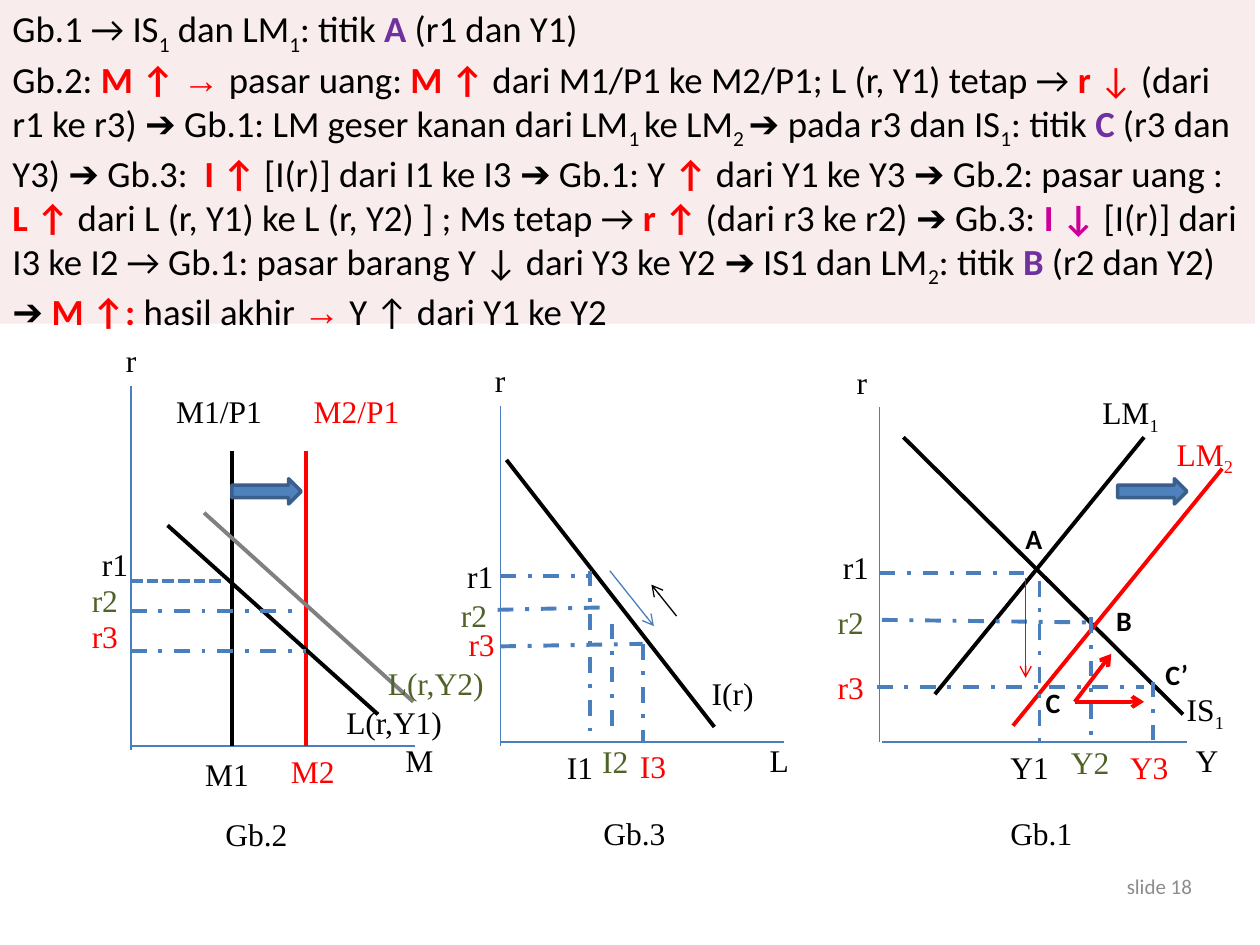
import pptx
import pptx.util
import pptx.dml.color
import pptx.enum.dml
import pptx.enum.shapes
import pptx.enum.text
import pptx.oxml
import pptx.oxml.ns

Inches = pptx.util.Inches
Dash = pptx.enum.dml.MSO_LINE
BLACK, RED, GREEN, BLUE, GREY = "000000", "FF0000", "4F6228", "4B7EBC", "808080"
SERIF, SANS = "Times New Roman", "Calibri"

RUN_STYLES = {
    "plain": {},
    "sub": {"subscript": True},
    "red": {"color": RED, "bold": True},
    "red light": {"color": RED},
    "red serif": {"color": RED, "bold": True, "font": SERIF},
    "purple": {"color": "7030A0", "bold": True},
    "magenta": {"color": "CC0099", "bold": True},
}

EXPLANATION = [
    [("Gb.1 → IS", "plain"), ("1", "sub"), (" dan LM", "plain"), ("1", "sub"),
     (": titik ", "plain"), ("A", "purple"), (" (r1 dan Y1)", "plain")],
    [("Gb.2: ", "plain"), ("M ↑ ", "red"), ("→ ", "red serif"), ("pasar uang: ", "plain"),
     ("M ↑", "red"), (" dari M1/P1 ke M2/P1; L (r, Y1) tetap → ", "plain"),
     ("r ", "red"), ("↓", "red light"),
     (" (dari r1 ke r3) ➔ Gb.1: LM geser kanan dari LM", "plain"), ("1 ", "sub"),
     ("ke LM", "plain"), ("2 ", "sub"), ("➔ pada r3 dan IS", "plain"), ("1", "sub"),
     (": titik ", "plain"), ("C", "purple"), (" (r3 dan Y3) ➔ Gb.3:  ", "plain"),
     ("I ↑", "red"), (" [I(r)] dari I1 ke I3 ➔ Gb.1: Y ", "plain"), ("↑ ", "red"),
     ("dari Y1 ke Y3 ➔ Gb.2: pasar uang : ", "plain"), ("L ↑", "red"),
     (" dari L (r, Y1) ke L (r, Y2) ] ; Ms tetap → ", "plain"), ("r ↑", "red"),
     (" (dari r3 ke r2) ➔ Gb.3: ", "plain"), ("I ↓", "magenta"),
     (" [I(r)] dari I3 ke I2 → Gb.1: pasar barang Y ↓ dari Y3 ke Y2 ➔ IS1 dan LM", "plain"),
     ("2", "sub"), (": titik ", "plain"), ("B", "purple"), (" (r2 dan Y2) ➔ ", "plain"),
     ("M ↑: ", "red"), ("hasil akhir ", "plain"), ("→ ", "red serif"),
     ("Y ↑ dari Y1 ke Y2", "plain")],
]


def rgb(value):
    """Turn a hex string into a colour."""
    return pptx.dml.color.RGBColor.from_string(value)


def add_run(paragraph, text, size, font=SANS, color=BLACK, bold=False, subscript=False):
    """Add one formatted run to a paragraph."""
    run = paragraph.add_run()
    run.text = text
    run.font.size = pptx.util.Pt(size)
    run.font.name = font
    run.font.bold = bold
    run.font.color.rgb = rgb(color)
    if subscript:
        run.font._element.set("baseline", "-25000")


def add_label(slide, left, top, width, text, color=BLACK, subscript="",
              size=18, font=SERIF, bold=False):
    """Add a one-line label with an optional subscript."""
    box = slide.shapes.add_textbox(Inches(left), Inches(top), Inches(width), Inches(0.4))
    frame = box.text_frame
    frame.word_wrap = False
    frame.auto_size = pptx.enum.text.MSO_AUTO_SIZE.SHAPE_TO_FIT_TEXT
    add_run(frame.paragraphs[0], text, size, font, color, bold)
    if subscript:
        add_run(frame.paragraphs[0], subscript, size, font, color, bold, True)


def add_line(slide, left, top, ends, color, width=2.25, dash=None, arrow=False):
    """Draw a line whose ends are measured from the panel corner."""
    x1, y1, x2, y2 = ends
    connector = slide.shapes.add_connector(
        pptx.enum.shapes.MSO_CONNECTOR.STRAIGHT, Inches(left + x1), Inches(top + y1),
        Inches(left + x2), Inches(top + y2))
    connector.line.color.rgb = rgb(color)
    connector.line.width = pptx.util.Pt(width)
    if dash:
        connector.line.dash_style = dash
    properties = connector._element.spPr
    if arrow:
        tail = pptx.oxml.parse_xml(
            f'<a:tailEnd {pptx.oxml.ns.nsdecls("a")} type="arrow"/>')
        properties.find(pptx.oxml.ns.qn("a:ln")).append(tail)
    properties.append(pptx.oxml.parse_xml(
        f'<a:effectLst {pptx.oxml.ns.nsdecls("a")}/>'))


def add_shift_arrow(slide, left, top):
    """Add the block arrow that marks a shift to the right."""
    arrow = slide.shapes.add_shape(pptx.enum.shapes.MSO_SHAPE.RIGHT_ARROW,
                                   Inches(left), Inches(top), Inches(0.55), Inches(0.2))
    arrow.shadow.inherit = False
    arrow.fill.solid()
    arrow.fill.fore_color.rgb = rgb("4F81BD")
    arrow.line.color.rgb = rgb("3A5F8C")
    arrow.line.width = pptx.util.Pt(2)


def add_panel(slide, left, top, axes, curves, guides, labels):
    """Draw the axes, curves, dashed guides and labels of one diagram."""
    for ends in axes:
        add_line(slide, left, top, ends, BLUE, 0.75)
    for color, ends in curves:
        add_line(slide, left, top, ends, color)
    for ends in guides:
        add_line(slide, left, top, ends, BLUE, dash=Dash.DASH_DOT)
    for x, y, *details in labels:
        add_label(slide, left + x, top + y, *details)


def add_money_market(slide, left, top):
    """Draw the money market diagram, Gb.2."""
    add_panel(
        slide, left, top,
        [(0.04, 0.06, 0.04, 2.95), (0.04, 2.92, 2.29, 2.92)],
        [(BLACK, (0.84, 0.58, 0.84, 2.92)), (RED, (1.43, 0.58, 1.43, 2.92)),
         (BLACK, (0.33, 1.17, 2, 2.67)), (GREY, (0.62, 1.07, 2.28, 2.57))],
        [(0.04, 1.85, 1.39, 1.85), (0.04, 2.17, 1.43, 2.17)],
        [(-0.1, -0.34, 0.28, "r"), (2.12, 2.83, 0.43, "M"),
         (0.3, 0.06, 0.89, "M1/P1"), (1.39, 0.06, 0.89, "M2/P1", RED),
         (1.65, 2.53, 0.97, "L(r,Y1)"), (1.98, 2.22, 0.97, "L(r,Y2)", GREEN),
         (-0.29, 1.28, 0.41, "r1"), (-0.37, 1.56, 0.41, "r2", GREEN),
         (-0.37, 1.85, 0.41, "r3", RED), (0.53, 2.94, 0.55, "M1"),
         (1.21, 2.92, 0.55, "M2", RED), (0.69, 3.42, 0.7, "Gb.2")])
    add_line(slide, left, top, (0.04, 1.61, 0.75, 1.61), BLUE, dash=Dash.SQUARE_DOT)
    add_shift_arrow(slide, left + 0.84, top + 0.8)


def add_investment(slide, left, top):
    """Draw the investment diagram, Gb.3."""
    add_panel(
        slide, left, top,
        [(-0.03, 0.22, -0.03, 2.92), (-0.03, 2.89, 2.22, 2.89)],
        [(BLACK, (0.02, 0.65, 1.67, 2.77))],
        [(-0.03, 1.57, 0.68, 1.57), (-0.05, 1.84, 0.84, 1.82), (-0.03, 2.13, 1.1, 2.11),
         (0.68, 1.53, 0.68, 2.81), (0.86, 1.95, 0.86, 2.84), (1.1, 2.11, 1.1, 2.89)],
        [(-0.17, -0.18, 0.28, "r"), (2.01, 2.83, 0.36, "L"), (1.55, 2.3, 0.54, "I(r)"),
         (-0.39, 1.37, 0.41, "r1"), (-0.44, 1.68, 0.41, "r2", GREEN),
         (-0.38, 1.91, 0.41, "r3", RED), (0.4, 2.89, 0.41, "I1"),
         (0.68, 2.84, 0.41, "I2", GREEN), (0.98, 2.88, 0.41, "I3", RED),
         (0.69, 3.41, 0.7, "Gb.3")])
    add_line(slide, left, top, (0.84, 1.53, 1.19, 1.97), BLUE, 0.75, arrow=True)
    add_line(slide, left, top, (1.37, 1.89, 1.17, 1.64), BLACK, 0.75, arrow=True)


def add_is_lm(slide, left, top):
    """Draw the IS-LM diagram, Gb.1."""
    add_panel(
        slide, left, top,
        [(-0.02, 0.23, -0.02, 2.89), (0, 2.89, 2.42, 2.89)],
        [(BLACK, (0.17, 0.47, 2.39, 2.67)), (BLACK, (0.42, 2.51, 2.08, 0.47)),
         (RED, (1.04, 2.76, 2.7, 0.72))],
        [(-0.02, 1.55, 1.21, 1.55), (0, 1.92, 1.64, 1.94), (-0.04, 2.45, 2.08, 2.45),
         (1.25, 1.61, 1.25, 2.89), (1.66, 1.9, 1.66, 2.92), (2.15, 2.41, 2.15, 2.91)],
        [(-0.3, -0.17, 0.29, "r"), (2.39, 2.83, 0.38, "Y"),
         (2.32, 2.43, 0.51, "IS", BLACK, "1"), (1.65, 0.07, 0.66, "LM", BLACK, "1"),
         (2.24, 0.4, 0.66, "LM", RED, "2"), (-0.41, 1.3, 0.41, "r1"),
         (-0.45, 1.74, 0.41, "r2", GREEN), (-0.45, 2.25, 0.41, "r3", RED),
         (0.92, 2.89, 0.51, "Y1"), (1.4, 2.85, 0.51, "Y2", GREEN),
         (1.87, 2.89, 0.51, "Y3", RED), (0.92, 3.41, 0.7, "Gb.1")])
    for x, y, width, name in [(1.04, 1.09, 0.34, "A"), (1.76, 1.74, 0.33, "B"),
                              (1.2, 2.39, 0.32, "C"), (2.15, 2.17, 0.39, "C’")]:
        add_label(slide, left + x, top + y, width, name, size=16, font=SANS, bold=True)
    add_line(slide, left, top, (1.14, 1.59, 1.14, 2.38), RED, 0.75, arrow=True)
    for tip in [(1.82, 2.19), (2.08, 2.57)]:
        add_line(slide, left, top, (1.53, 2.57, *tip), RED, arrow=True)
    add_shift_arrow(slide, left + 1.87, top + 0.8)


def add_explanation(slide, left, top, width, height):
    """Add the tinted band with the explanation."""
    band = slide.shapes.add_shape(pptx.enum.shapes.MSO_SHAPE.RECTANGLE, Inches(left),
                                  Inches(top), Inches(width), Inches(height))
    band.shadow.inherit = False
    band.fill.solid()
    band.fill.fore_color.rgb = rgb("F8EDEC")
    band.line.fill.background()
    frame = band.text_frame
    frame.word_wrap = True
    frame.vertical_anchor = pptx.enum.text.MSO_ANCHOR.TOP
    for index, runs in enumerate(EXPLANATION):
        paragraph = frame.add_paragraph() if index else frame.paragraphs[0]
        paragraph.alignment = pptx.enum.text.PP_ALIGN.LEFT
        for text, style in runs:
            add_run(paragraph, text, 21, **RUN_STYLES[style])


def add_slide_number(slide, left, top, width, height):
    """Add the slide number at the foot."""
    box = slide.shapes.add_textbox(Inches(left), Inches(top), Inches(width), Inches(height))
    frame = box.text_frame
    frame.word_wrap = True
    frame.vertical_anchor = pptx.enum.text.MSO_ANCHOR.MIDDLE
    frame.paragraphs[0].alignment = pptx.enum.text.PP_ALIGN.RIGHT
    add_run(frame.paragraphs[0], "slide 18", 12, color="8C8C8C")


def main():
    """Build and save the presentation."""
    presentation = pptx.Presentation()
    presentation.slide_width, presentation.slide_height = Inches(10), Inches(7.5)
    slide = presentation.slides.add_slide(presentation.slide_layouts[6])
    add_explanation(slide, 0, 0, 9.96, 2.57)
    add_money_market(slide, 1, 3)
    add_investment(slide, 4, 3)
    add_is_lm(slide, 7, 3)
    add_slide_number(slide, 7.23, 6.83, 2.33, 0.4)
    presentation.save("out.pptx")


if __name__ == "__main__":
    main()
